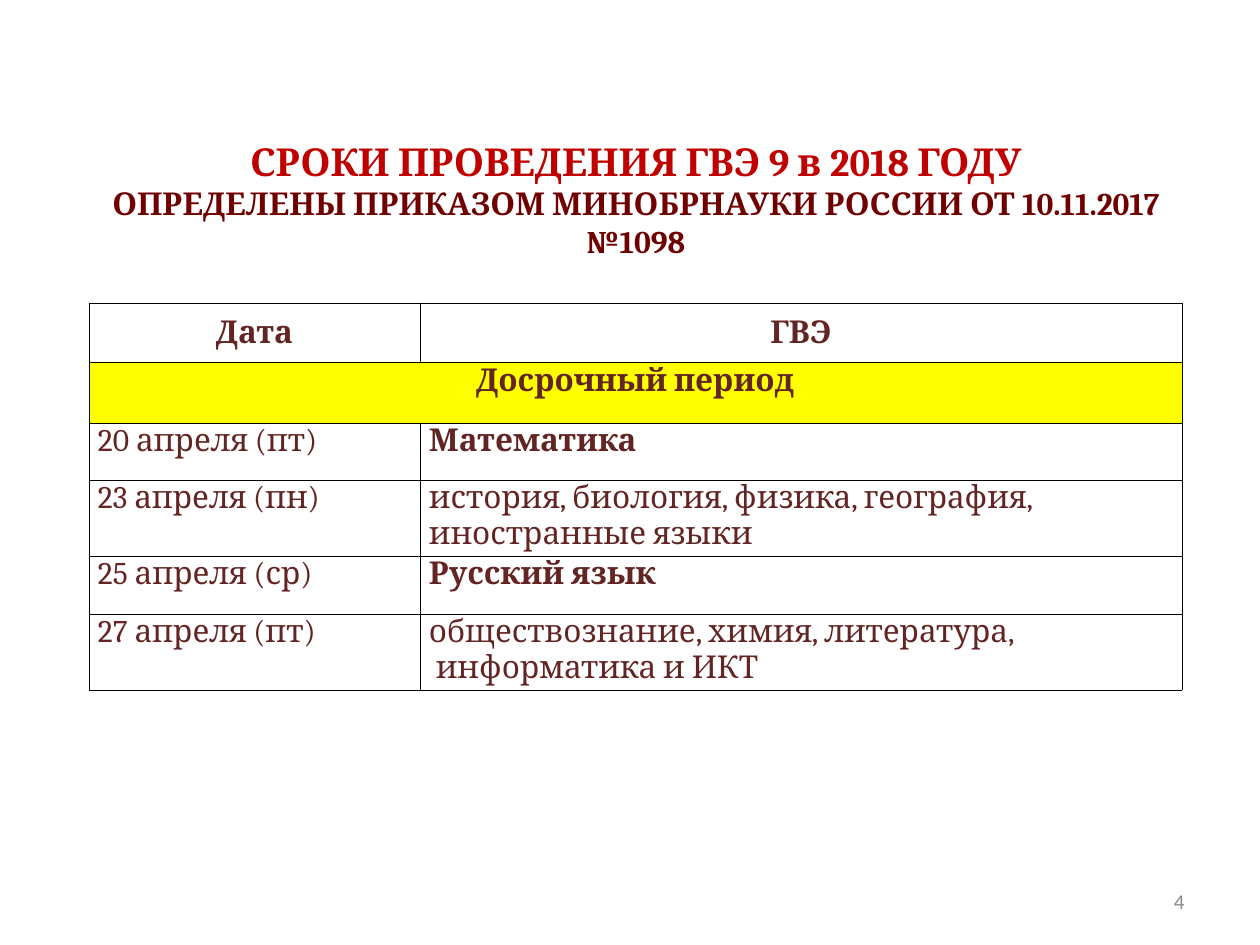
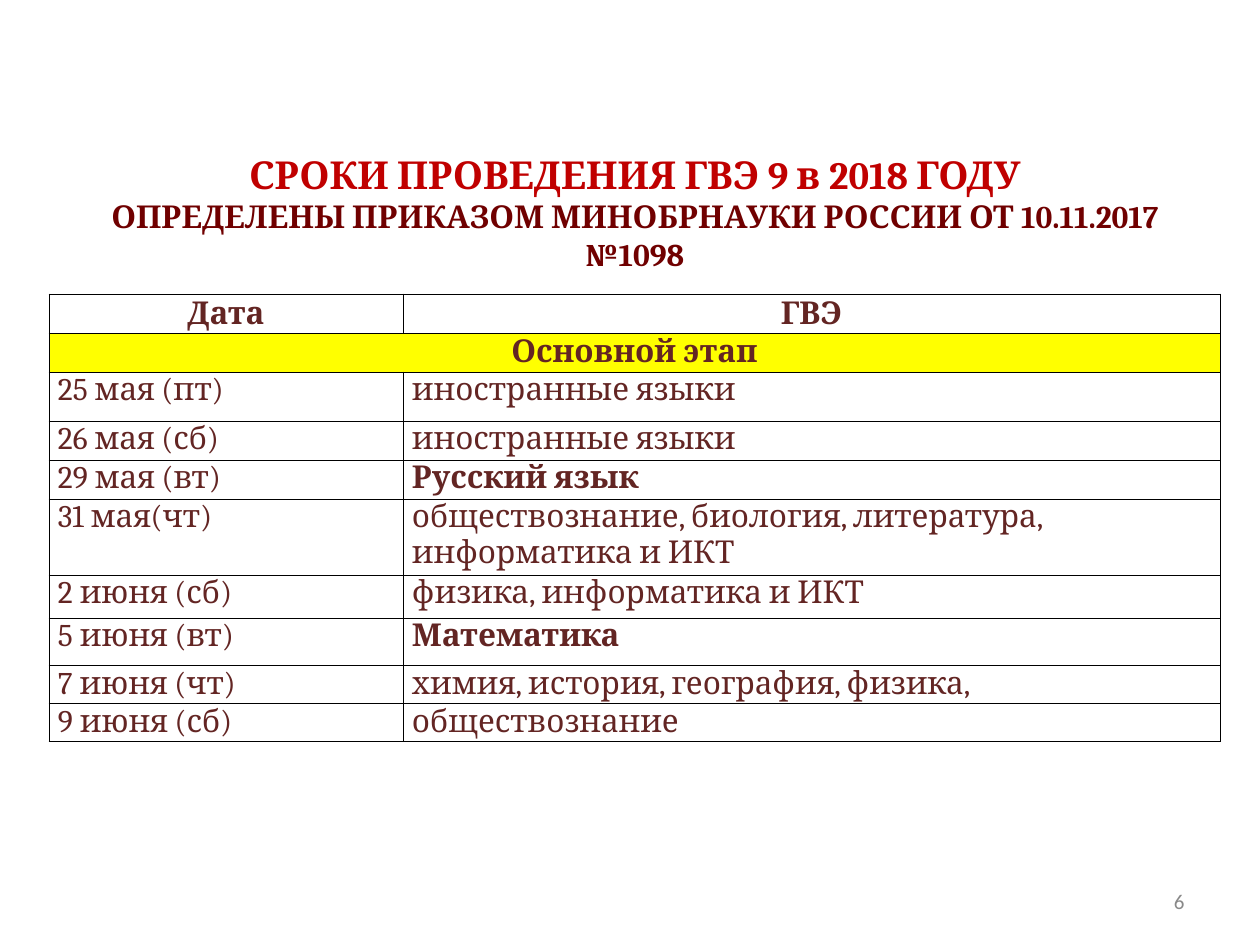
from dataclasses import dataclass

from lxml import etree
from pptx import Presentation
from pptx.dml.color import RGBColor
from pptx.enum.text import MSO_ANCHOR, MSO_AUTO_SIZE, PP_ALIGN
from pptx.oxml.ns import qn
from pptx.util import Pt

LEFT, MID, RIGHT = PP_ALIGN.LEFT, PP_ALIGN.CENTER, PP_ALIGN.RIGHT
TOP, MIDDLE = MSO_ANCHOR.TOP, MSO_ANCHOR.MIDDLE
FIXED = MSO_AUTO_SIZE.NONE
TITLE_ONLY = 5


@dataclass(frozen=True)
class Theme:
    head: str = "C00000"
    sub: str = "700000"
    text: str = "632523"
    band: str = "FFFF00"
    line: str = "000000"
    num: str = "898989"
    serif: str = "Cambria"
    sans: str = "Calibri"
    big: int = 22
    body: int = 18
    small: int = 12


theme = Theme()


def px(n):
    """Turn px (126 to the inch) into EMU."""
    return round(n * 914400 / 126)


def style(font, size, color, bold, name=theme.serif):
    look = {"name": name, "size": Pt(size), "bold": bold}
    for key, value in look.items():
        setattr(font, key, value)
    font.color.rgb = RGBColor.from_string(color)


# Content: each row is height, date, subjects, bold subjects
slides = [
    {
        "num": "4", "title": (69, 150, 1134, 135), "foot": 44,
        "table": (89, 303), "cols": (331, 762), "heads": (59, 61),
        "band": "Досрочный период",
        "rows": [
            (57, "20 апреля (пт)", "Математика", True),
            (76, "23 апреля (пн)",
             "история, биология, физика, география, иностранные языки", False),
            (58, "25 апреля (ср)", "Русский язык", True),
            (76, "27 апреля (пт)",
             "обществознание, химия, литература,\n информатика и ИКТ", False),
        ],
    },
    {
        "num": "6", "title": (68, 163, 1134, 97), "foot": 6,
        "table": (49, 294), "cols": (354, 817), "heads": (39, 39),
        "band": "Основной этап",
        "rows": [
            (49, "25 мая (пт)", "иностранные языки", False),
            (39, "26 мая (сб)", "иностранные языки", False),
            (39, "29 мая (вт)", "Русский язык", True),
            (76, "31 мая(чт)",
             "обществознание, биология, литература, информатика и ИКТ", False),
            (43, "2 июня (сб)", "физика, информатика и ИКТ", False),
            (48, "5 июня (вт)", "Математика", True),
            (38, "7 июня (чт)", "химия, история, география, физика,", False),
            (38, "9 июня (сб)", "обществознание", False),
        ],
    },
]
lines = [
    ("СРОКИ ПРОВЕДЕНИЯ ГВЭ 9 в 2018 ГОДУ", theme.big, theme.head),
    ("ОПРЕДЕЛЕНЫ ПРИКАЗОМ МИНОБРНАУКИ РОССИИ ОТ 10.11.2017 №1098",
     theme.body, theme.sub),
]

prs = Presentation()
prs.slide_width, prs.slide_height = px(1260), px(945)

for data in slides:
    slide = prs.slides.add_slide(prs.slide_layouts[TITLE_ONLY])

    # Title
    title = slide.shapes.title
    for key, n in zip(("left", "top", "width", "height"), data["title"]):
        setattr(title, key, px(n))
    frame = title.text_frame
    frame.auto_size, frame.vertical_anchor = FIXED, MIDDLE
    frame.margin_bottom = px(data["foot"])
    para = frame.paragraphs[0]
    para.alignment = MID
    for i, (text, size, color) in enumerate(lines):
        if i:
            para.add_line_break()
        run = para.add_run()
        run.text = text
        style(run.font, size, color, True)

    # Table grid
    rows = [(data["heads"][0], "Дата", "ГВЭ", True),
            (data["heads"][1], data["band"], "", True)] + data["rows"]
    left, top = data["table"]
    high = sum(row[0] for row in rows)
    grid = slide.shapes.add_table(
        len(rows), 2, px(left), px(top), px(sum(data["cols"])), px(high)).table
    grid.first_row = grid.horz_banding = False
    for col, wide in zip(grid.columns, data["cols"]):
        col.width = px(wide)
    grid.cell(1, 0).merge(grid.cell(1, 1))

    # Table cells
    for r, (tall, date, topic, bold) in enumerate(rows):
        grid.rows[r].height = px(tall)
        for c, text in enumerate((date, topic)):
            cell = grid.cell(r, c)
            props = cell._tc.get_or_add_tcPr()
            for side in ("lnL", "lnR", "lnT", "lnB"):
                edge = etree.SubElement(props, qn(f"a:{side}"), w=str(Pt(0.5)))
                fill = etree.SubElement(edge, qn("a:solidFill"))
                etree.SubElement(fill, qn("a:srgbClr"), val=theme.line)
            if r == 1:
                cell.fill.solid()
                cell.fill.fore_color.rgb = RGBColor.from_string(theme.band)
            else:
                cell.fill.background()
            side = px(1 if r < 2 else 9)
            form = {
                "margin_left": side, "margin_right": side,
                "margin_top": px(1 if r < 2 else 0), "margin_bottom": 0,
                "vertical_anchor": MIDDLE if r == 0 else TOP,
            }
            for key, value in form.items():
                setattr(cell, key, value)
            if cell.is_spanned:
                continue
            cell.text_frame.text = text
            for para in cell.text_frame.paragraphs:
                para.alignment = MID if r < 2 else LEFT
                for run in para.runs:
                    style(run.font, theme.body, theme.text,
                          bold and (r < 2 or c == 1))

    # Slide number
    box = slide.shapes.add_textbox(px(903), px(876), px(294), px(50))
    frame = box.text_frame
    frame.word_wrap, frame.vertical_anchor = True, MIDDLE
    para = frame.paragraphs[0]
    para.alignment = RIGHT
    run = para.add_run()
    run.text = data["num"]
    style(run.font, theme.small, theme.num, False, theme.sans)

prs.save("out.pptx")
